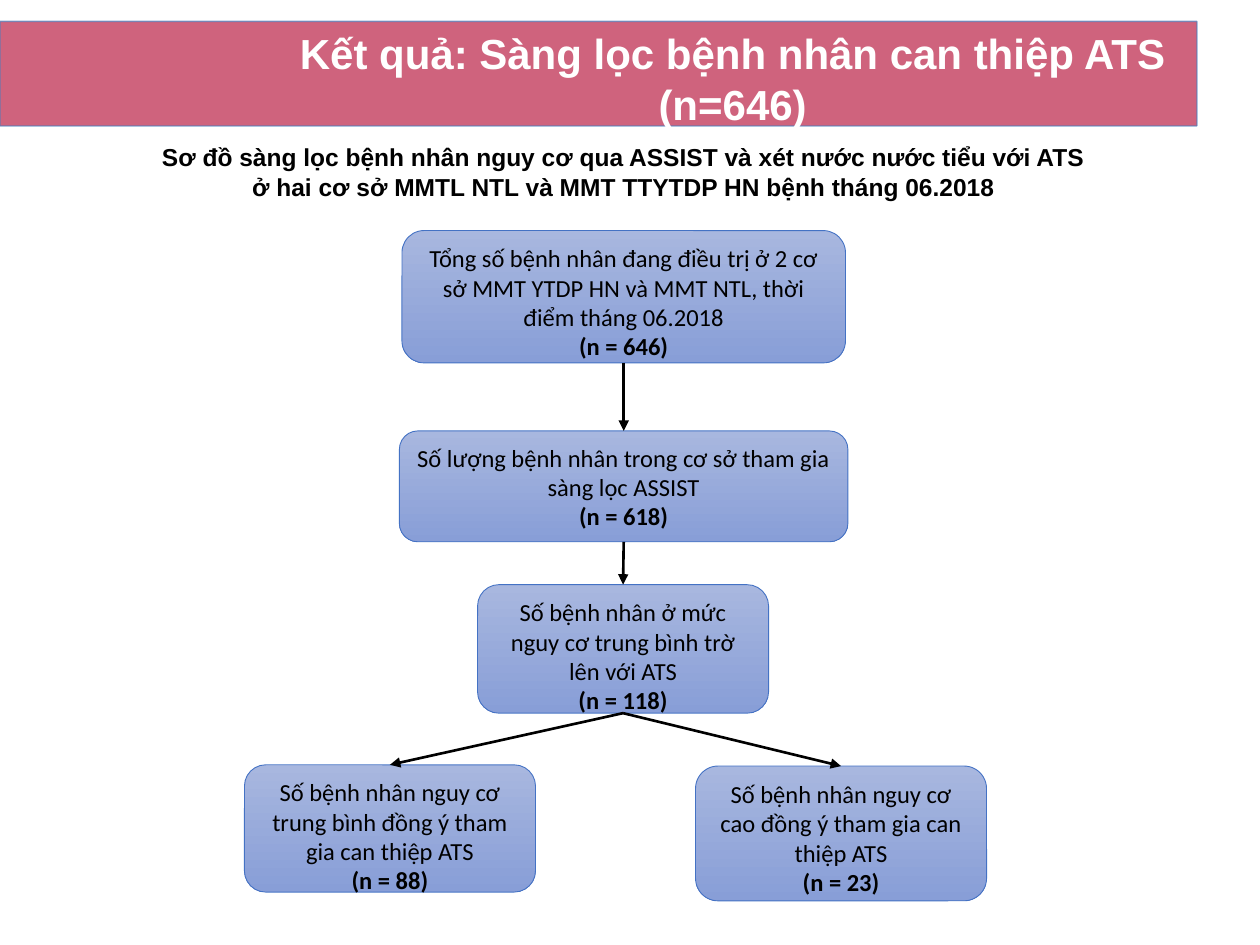
from lxml import etree
from pptx import Presentation
from pptx.dml.color import RGBColor
from pptx.enum.shapes import MSO_CONNECTOR, MSO_SHAPE
from pptx.enum.text import MSO_ANCHOR, MSO_AUTO_SIZE, PP_ALIGN
from pptx.oxml.ns import qn
from pptx.util import Inches, Pt

CENTER = PP_ALIGN.CENTER
TOP_ANCHOR = MSO_ANCHOR.TOP
NO_AUTOFIT = MSO_AUTO_SIZE.NONE
RECTANGLE = MSO_SHAPE.RECTANGLE
ROUNDED = MSO_SHAPE.ROUNDED_RECTANGLE
STRAIGHT = MSO_CONNECTOR.STRAIGHT
BOTTOM_SIDE, TOP_SIDE = 2, 0

ROSE = RGBColor(0xC0, 0x2F, 0x52)
BAND_EDGE = RGBColor(0x4B, 0x7E, 0xBC)
STEP_LIGHT = RGBColor(0xA8, 0xB7, 0xDF)
STEP_DARK = RGBColor(0x88, 0x9E, 0xD7)
STEP_EDGE = RGBColor(0x44, 0x72, 0xC4)
BLACK = RGBColor(0, 0, 0)
WHITE = RGBColor(0xFF, 0xFF, 0xFF)

TITLE = "Kết quả: Sàng lọc bệnh nhân can thiệp ATS (n=646)"
SUBTITLE = [
    "Sơ đồ sàng lọc bệnh nhân nguy cơ qua ASSIST và xét nước nước tiểu với ATS",
    "ở hai cơ sở MMTL NTL và MMT TTYTDP HN bệnh tháng 06.2018",
]
STEPS = {
    "total": ((3.19, 1.83, 3.52, 1.05), 646,
              "Tổng số bệnh nhân đang điều trị ở 2 cơ sở MMT YTDP HN và MMT NTL, "
              "thời điểm tháng 06.2018"),
    "screened": ((3.17, 3.42, 3.56, 0.88), 618,
                 "Số lượng bệnh nhân trong cơ sở tham gia sàng lọc ASSIST"),
    "at_risk": ((3.79, 4.64, 2.31, 1.02), 118,
                "Số bệnh nhân ở mức nguy cơ trung bình trờ lên với ATS"),
    "medium": ((1.94, 6.07, 2.31, 1.01), 88,
               "Số bệnh nhân nguy cơ trung bình đồng ý tham gia can thiệp ATS"),
    "high": ((5.52, 6.08, 2.31, 1.07), 23,
             "Số bệnh nhân nguy cơ cao đồng ý tham gia can thiệp ATS"),
}
LINKS = [("total", "screened"), ("screened", "at_risk"),
         ("at_risk", "medium"), ("at_risk", "high")]


def to_inches(box):
    """Turn a box of plain numbers into lengths."""
    return [Inches(value) for value in box]


def write_lines(frame, lines, font_name, size, color, bold_lines):
    """Write centred paragraphs, with the numbered lines in bold."""
    frame.text = "\n".join(lines)
    frame.word_wrap = True
    frame.auto_size = NO_AUTOFIT
    frame.vertical_anchor = TOP_ANCHOR
    for index, para in enumerate(frame.paragraphs):
        para.alignment = CENTER
        for span in para.runs:
            span.font.name = font_name
            span.font.size = Pt(size)
            span.font.color.rgb = color
            span.font.bold = index in bold_lines


def set_opacity(color_element, percent):
    """Make a colour element partly transparent."""
    etree.SubElement(color_element, qn("a:alpha"), val=str(percent * 1000))


def add_title(page, band_box, title_box):
    """Place the title over its rose band."""
    band = page.shapes.add_shape(RECTANGLE, *to_inches(band_box))
    band.shadow.inherit = False
    band.fill.solid()
    band.fill.fore_color.rgb = ROSE
    band.line.color.rgb = BAND_EDGE
    band.line.width = Pt(0.75)
    fill_color, line_color = band.element.spPr.iter(qn("a:srgbClr"))
    set_opacity(fill_color, 75)
    set_opacity(line_color, 70)

    title = page.shapes.title
    title.left, title.top, title.width, title.height = to_inches(title_box)
    write_lines(title.text_frame, [TITLE], "Arial", 24, WHITE, {0})
    band.element.addnext(title.element)


def add_subtitle(page, box):
    """Place the two-line heading of the flow chart."""
    heading = page.shapes.add_textbox(*to_inches(box))
    write_lines(heading.text_frame, SUBTITLE, "Arial", 14, BLACK, {0, 1})
    heading.text_frame.word_wrap = False


def add_step(page, box, count, label):
    """Place one step of the flow chart and return it."""
    step = page.shapes.add_shape(ROUNDED, *to_inches(box))
    step.shadow.inherit = False
    step.fill.gradient()
    step.fill.gradient_angle = 270
    for stop, color, position in zip(step.fill.gradient_stops,
                                     (STEP_LIGHT, STEP_DARK), (0, 1)):
        stop.color.rgb = color
        stop.position = position
    step.line.color.rgb = STEP_EDGE
    step.line.width = Pt(0.5)
    write_lines(step.text_frame, [label, f"(n = {count})"],
                "Calibri", 14, BLACK, {1})
    return step


def add_arrow(page, source, target):
    """Join the bottom of one step to the top of the next."""
    arrow = page.shapes.add_connector(STRAIGHT, 0, 0, 0, 0)
    arrow.begin_connect(source, BOTTOM_SIDE)
    arrow.end_connect(target, TOP_SIDE)
    arrow.line.color.rgb = BLACK
    arrow.line.width = Pt(1.5)
    etree.SubElement(arrow.line._get_or_add_ln(), qn("a:tailEnd"), type="triangle")
    etree.SubElement(arrow.element.spPr, qn("a:effectLst"))


def add_flow(page):
    """Place the steps and the arrows between them."""
    steps = {name: add_step(page, *details) for name, details in STEPS.items()}
    for source, target in LINKS:
        add_arrow(page, steps[source], steps[target])


def main():
    """Build the slide and save it."""
    deck = Presentation()
    deck.slide_width, deck.slide_height = Inches(10), Inches(7.5)
    page = deck.slides.add_slide(deck.slide_layouts[5])
    add_title(page, (0, 0.17, 9.5, 0.83), (1.96, 0.17, 7.71, 0.56))
    add_subtitle(page, (1.17, 1.08, 7.56, 0.57))
    add_flow(page)
    deck.save("out.pptx")


if __name__ == "__main__":
    main()
